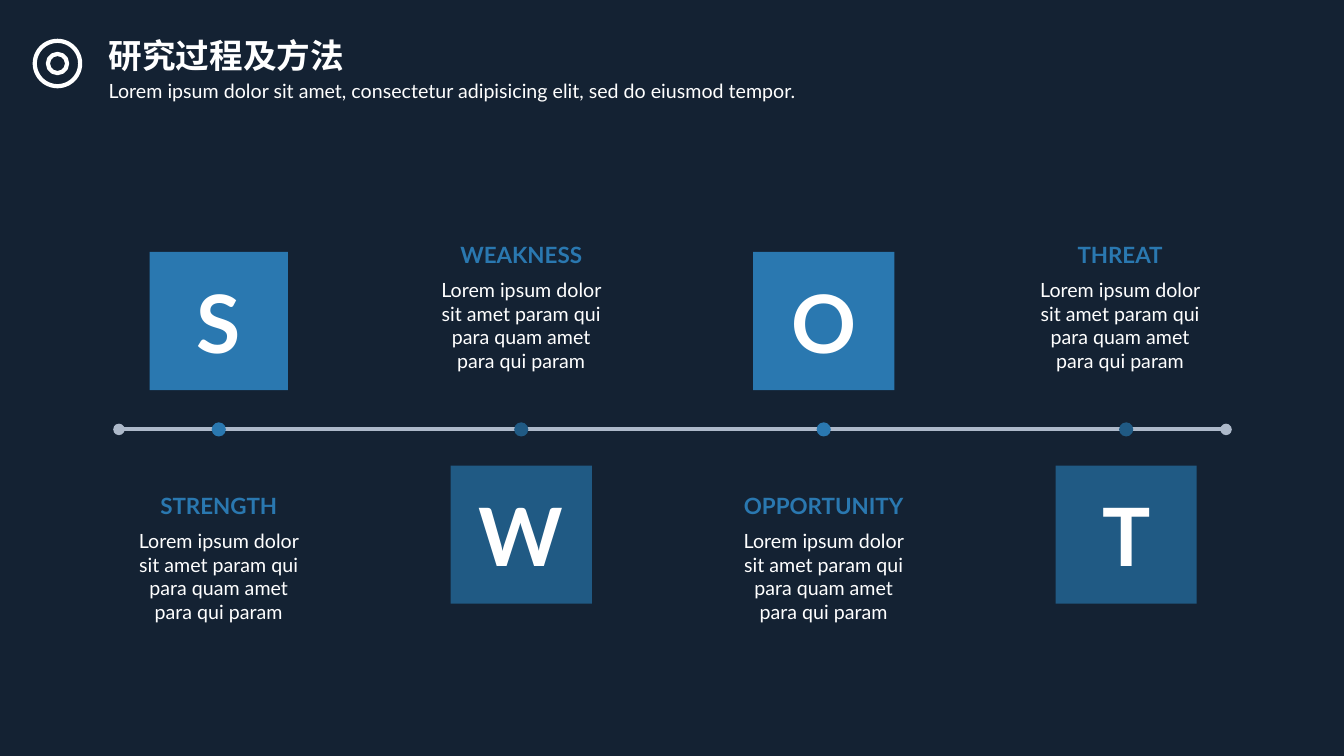
from lxml import etree
from pptx import Presentation
from pptx.dml.color import RGBColor
from pptx.enum.shapes import MSO_CONNECTOR, MSO_SHAPE
from pptx.enum.text import MSO_ANCHOR, PP_ALIGN
from pptx.oxml.ns import qn
from pptx.util import Inches, Pt

NAVY = RGBColor(0x14, 0x22, 0x33)
WHITE = RGBColor(0xFF, 0xFF, 0xFF)
GRAY = RGBColor(0xAD, 0xB9, 0xCA)
BLUE = RGBColor(0x2A, 0x78, 0xB0)
DEEP_BLUE = RGBColor(0x20, 0x5A, 0x84)

FONT = "Lato"
BODY = "Lorem ipsum dolor sit amet param qui para quam amet para qui param"
AXIS_Y = 4.26
FIRST_X, STEP = 2.17, 3.0
TEXT_W, HEAD_H, BODY_H = 1.86, 0.37, 1.04
TILE_H, DOT = 1.37, 0.14

# letter, heading, tile width, shift of the text from the column centre
COLUMNS = [
    ("S", "STRENGTH", 1.37, 0),
    ("W", "WEAKNESS", 1.4, 0),
    ("O", "OPPORTUNITY", 1.4, 0),
    ("T", "THREAT", 1.4, -0.06),
]


def write(s, text, size, color, bold=False, align=PP_ALIGN.LEFT, anchor=MSO_ANCHOR.TOP):
    tf = s.text_frame
    tf.word_wrap = True
    tf.vertical_anchor = anchor
    p = tf.paragraphs[0]
    p.alignment = align
    r = p.add_run()
    r.text = text
    r.font.name = FONT
    r.font.size = Pt(size)
    r.font.bold = bold
    r.font.color.rgb = color
    return p


def add_text(slide, x, y, w, h, *args, **kwargs):
    s = slide.shapes.add_textbox(Inches(x), Inches(y), Inches(w), Inches(h))
    return write(s, *args, **kwargs)


def add_filled(slide, kind, x, y, w, h, color):
    s = slide.shapes.add_shape(kind, Inches(x), Inches(y), Inches(w), Inches(h))
    s.shadow.inherit = False
    s.fill.solid()
    s.fill.fore_color.rgb = color
    s.line.fill.background()
    return s


def add_ring(slide, cx, cy, d):
    s = slide.shapes.add_shape(MSO_SHAPE.OVAL, Inches(cx - d / 2), Inches(cy - d / 2),
                               Inches(d), Inches(d))
    s.shadow.inherit = False
    s.fill.background()
    s.line.color.rgb = WHITE
    s.line.width = Pt(3)


def add_header(slide, x, y):
    """Target icon, title and subtitle, with the top left corner at x, y."""
    for d in (0.45, 0.19):
        add_ring(slide, x + 0.22, y + 0.41, d)
    title = add_text(slide, x + 0.63, y, 2.9, 0.54, "研究过程及方法", 24, WHITE, bold=True)
    subtitle = add_text(slide, x + 0.63, y + 0.47, 7.85, 0.36,
                        "Lorem ipsum dolor sit amet, consectetur adipisicing elit, "
                        "sed do eiusmod tempor.", 14, WHITE)
    subtitle.space_before = Pt(10)
    for p in (title, subtitle):
        p.line_spacing = 1.2


def add_axis(slide, x1, x2, y):
    line = slide.shapes.add_connector(MSO_CONNECTOR.STRAIGHT, Inches(x1), Inches(y),
                                      Inches(x2), Inches(y))
    line.line.color.rgb = GRAY
    line.line.width = Pt(2.75)
    ln = line.line._get_or_add_ln()
    for end in ("a:headEnd", "a:tailEnd"):
        etree.SubElement(ln, qn(end), type="oval")
    etree.SubElement(line._element.spPr, qn("a:effectLst"))


def add_column(slide, cx, axis_y, tile_above, letter, heading, tile_w, text_dx):
    """Dot on the axis, with the letter tile on one side and the text on the other."""
    color = BLUE if tile_above else DEEP_BLUE
    tile_y = axis_y - 1.76 if tile_above else axis_y + 0.36
    text_y = axis_y + 0.57 if tile_above else axis_y - 1.92
    text_x = cx + text_dx - TEXT_W / 2
    add_filled(slide, MSO_SHAPE.OVAL, cx - DOT / 2, axis_y - DOT / 2, DOT, DOT, color)
    tile = add_filled(slide, MSO_SHAPE.RECTANGLE, cx - tile_w / 2, tile_y, tile_w, TILE_H, color)
    write(tile, letter, 57.5, WHITE, bold=True, align=PP_ALIGN.CENTER, anchor=MSO_ANCHOR.MIDDLE)
    add_text(slide, text_x, text_y, TEXT_W, HEAD_H, heading, 16, BLUE, bold=True,
             align=PP_ALIGN.CENTER, anchor=MSO_ANCHOR.MIDDLE)
    add_text(slide, text_x, text_y + HEAD_H, TEXT_W, BODY_H, BODY, 14, WHITE,
             align=PP_ALIGN.CENTER)


def main():
    prs = Presentation()
    prs.slide_width, prs.slide_height = Inches(13.33), Inches(7.5)
    slide = prs.slides.add_slide(prs.slide_layouts[6])
    slide.background.fill.solid()
    slide.background.fill.fore_color.rgb = NAVY
    add_header(slide, 0.35, 0.22)
    add_axis(slide, 1.18, 12.16, AXIS_Y)
    for i, column in enumerate(COLUMNS):
        add_column(slide, FIRST_X + i * STEP, AXIS_Y, i % 2 == 0, *column)
    prs.save("out.pptx")


if __name__ == "__main__":
    main()
